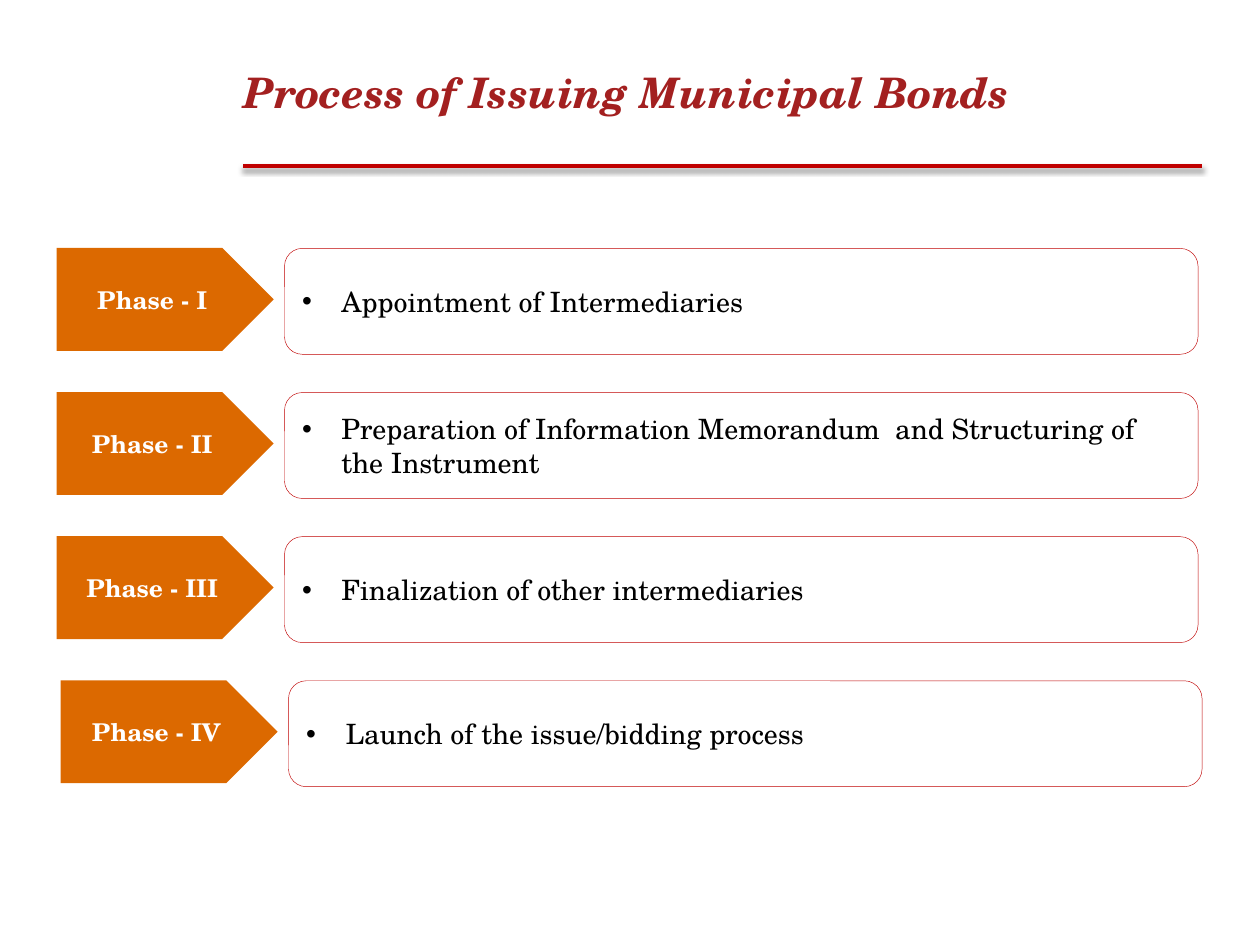
from lxml import etree
from pptx import Presentation
from pptx.dml.color import RGBColor as RGB
from pptx.enum.shapes import MSO_CONNECTOR as LINK, MSO_SHAPE as SHAPE
from pptx.enum.text import MSO_ANCHOR as ANCHOR, PP_ALIGN as ALIGN
from pptx.oxml import parse_xml
from pptx.oxml.ns import nsdecls, qn
from pptx.util import Pt

FONT = "TeX Gyre Schola"
HUES = {"title": "A32020", "rule": "C00000", "arrow": "DC6900",
        "white": "FFFFFF", "black": "000000"}


def write(shape, text, size, hue, bold=False, italic=False,
          align=ALIGN.LEFT, bullet=False, inset=None):
    frame = shape.text_frame
    frame.word_wrap = True
    frame.vertical_anchor = ANCHOR.MIDDLE
    if inset is not None:
        frame.margin_left = frame.margin_right = Pt(inset)
        frame.margin_top = frame.margin_bottom = Pt(inset)
    para = frame.paragraphs[0]
    para.alignment = align
    if bullet:
        props = para._p.get_or_add_pPr()
        props.set("marL", str(Pt(22.5)))
        props.set("indent", str(-Pt(22.5)))
        etree.SubElement(props, qn("a:buFont")).set("typeface", "Arial")
        etree.SubElement(props, qn("a:buChar")).set("char", "•")
    run = para.add_run()
    run.text = text
    font = run.font
    font.name, font.size = FONT, Pt(size)
    font.bold, font.italic = bold, italic
    font.color.rgb = RGB.from_string(HUES[hue])


def block(kind, left, top, width, height, fill, line=None):
    shape = slide.shapes.add_shape(kind, Pt(left), Pt(top), Pt(width), Pt(height))
    shape.shadow.inherit = False
    shape.fill.solid()
    shape.fill.fore_color.rgb = RGB.from_string(HUES[fill])
    if line:
        shape.line.color.rgb = RGB.from_string(HUES[line])
        shape.line.width = Pt(0.25)
    else:
        shape.line.fill.background()
    return shape


deck = Presentation()
deck.slide_width, deck.slide_height = Pt(720), Pt(540)
slide = deck.slides.add_slide(deck.slide_layouts[6])

# Title
title = slide.shapes.add_textbox(Pt(139), Pt(17.3), Pt(569.5), Pt(70))
write(title, "Process of Issuing Municipal Bonds", 24, "title",
      bold=True, italic=True, inset=0)

# Rule with a soft shadow below
rule = slide.shapes.add_connector(LINK.STRAIGHT, Pt(139), Pt(95), Pt(687), Pt(95))
rule.line.color.rgb = RGB.from_string(HUES["rule"])
rule.line.width = Pt(2.25)
rule._element.spPr.append(parse_xml(
    f'<a:effectLst {nsdecls("a")}>'
    f'<a:outerShdw blurRad="{Pt(3.1)}" dist="{Pt(1.8)}" dir="5400000" rotWithShape="0">'
    f'<a:srgbClr val="{HUES["black"]}"><a:alpha val="35000"/></a:srgbClr>'
    '</a:outerShdw></a:effectLst>'))

# Phases: an arrow and its step on each row; the last row sits further right
phases = [
    ("Phase - I", "Appointment of Intermediaries", 0),
    ("Phase - II", "Preparation of Information Memorandum  and Structuring of the Instrument", 0),
    ("Phase - III", "Finalization of other intermediaries", 0),
    ("Phase - IV", "Launch of the issue/bidding process", 2.3),
]
for row, (name, step, shift) in enumerate(phases):
    top = 141.7 + row * 82.35
    arrow = block(SHAPE.PENTAGON, 32.4 + shift, top, 124, 58.8, "arrow")
    write(arrow, name, 14, "white", bold=True, align=ALIGN.CENTER)
    box = block(SHAPE.ROUNDED_RECTANGLE, 162.6 + shift, top + 0.3, 522, 60.5,
                "white", line="rule")
    write(box, step, 16, "black", bullet=True)

deck.save("out.pptx")
